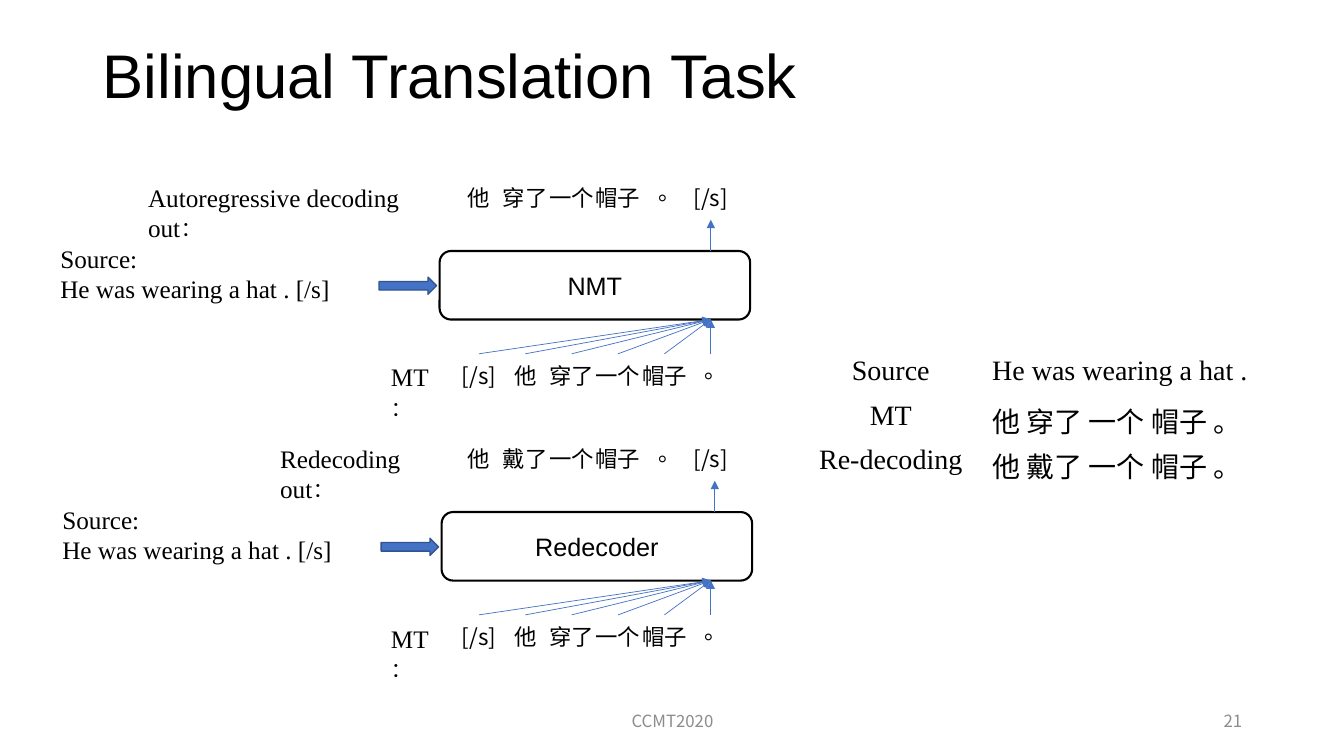
from lxml import etree
from pptx import Presentation
from pptx.dml.color import RGBColor
from pptx.enum.shapes import MSO_CONNECTOR, MSO_SHAPE
from pptx.enum.text import MSO_ANCHOR, PP_ALIGN
from pptx.oxml.ns import qn
from pptx.util import Inches, Pt

BLACK = RGBColor(0x00, 0x00, 0x00)
BLUE = RGBColor(0x44, 0x72, 0xC4)
DARK_BLUE = RGBColor(0x32, 0x54, 0x91)
GRAY = RGBColor(0x8C, 0x8C, 0x8C)
SERIF, SANS, CJK = "Times New Roman", "Arial", "Noto Sans CJK SC"

TITLE = "Bilingual Translation Task"
SOURCE = ["Source:", "He was wearing a hat . [/s]"]
MT_TOKENS = ["[/s]", "他", "穿了", "一个", "帽子", "。"]
PANELS = [
    dict(model="NMT", label="Autoregressive decoding out：", label_left=1.37,
         out=["他", "穿了", "一个", "帽子", "。", "[/s]"],
         dx=0, dy=0, up_x=7.05),
    dict(model="Redecoder", label="Redecoding out：", label_left=2.68,
         out=["他", "戴了", "一个", "帽子", "。", "[/s]"],
         dx=0.02, dy=2.59, up_x=7.09),
]
EXAMPLE = [
    ("Source", "He was wearing a hat .", SERIF),
    ("MT", "他 穿了 一个 帽子 。", CJK),
    ("Re-decoding", "他 戴了 一个 帽子 。", CJK),
]
FOOTERS = [("CCMT2020", 4.42, 4.5, PP_ALIGN.CENTER),
           ("21", 9.42, 3, PP_ALIGN.RIGHT)]

TOKEN_LEFT, TOKEN_W, TOKEN_H = 4.52, 0.46, 0.44
FAN_X = TOKEN_LEFT + 5.5 * TOKEN_W  # centre of the last token
LABEL_RIGHT = 4.52


def write(tf, text, size=18, font=SERIF, color=BLACK, align=PP_ALIGN.LEFT,
          anchor=MSO_ANCHOR.TOP):
    """Fill a text frame with one line of text or a list of lines."""
    tf.word_wrap = True
    tf.vertical_anchor = anchor
    lines = [text] if isinstance(text, str) else text
    for i, line in enumerate(lines):
        p = tf.paragraphs[0] if i == 0 else tf.add_paragraph()
        p.alignment = align
        r = p.add_run()
        r.text = line
        r.font.size, r.font.name, r.font.bold = Pt(size), font, False
        r.font.color.rgb = color
        etree.SubElement(r._r.get_or_add_rPr(), qn("a:ea"), typeface=font)


def add_text(slide, text, left, top, width, height, **fmt):
    box = slide.shapes.add_textbox(*map(Inches, (left, top, width, height)))
    write(box.text_frame, text, **fmt)
    return box


def add_tokens(slide, tokens, top):
    boxes = []
    for i, token in enumerate(tokens):
        box = add_text(slide, token, TOKEN_LEFT + i * TOKEN_W, top, TOKEN_W,
                       TOKEN_H, size=16, font=CJK, align=PP_ALIGN.CENTER,
                       anchor=MSO_ANCHOR.MIDDLE)
        tf = box.text_frame
        stop = token == "。"
        tf.margin_left = Inches(0.1 if stop else 0)
        tf.margin_bottom = Inches(0.12 if stop else 0)
        tf.margin_top = tf.margin_right = 0
        boxes.append(box)
    return boxes


def add_arrow(slide, x1, y1, x2, y2):
    line = slide.shapes.add_connector(MSO_CONNECTOR.STRAIGHT,
                                      *map(Inches, (x1, y1, x2, y2)))
    line.line.color.rgb = BLUE
    line.line.width = Pt(0.5)
    etree.SubElement(line.line._get_or_add_ln(), qn("a:tailEnd"),
                     type="triangle")
    etree.SubElement(line._element.spPr, qn("a:effectLst"))
    return line


def add_block(slide, kind, left, top, width, height, line_color, line_width):
    sp = slide.shapes.add_shape(kind, *map(Inches, (left, top, width, height)))
    sp.shadow.inherit = False
    sp.fill.background()
    sp.line.color.rgb = line_color
    sp.line.width = Pt(line_width)
    return sp


def add_panel(slide, model, label, label_left, out, dx, dy, up_x):
    """Draw one decoder with its source, input tokens and output tokens."""
    add_text(slide, SOURCE, 0.5 + dx, 2.36 + dy, 3.26, 0.71)
    arrow = add_block(slide, MSO_SHAPE.RIGHT_ARROW, 3.76 + dx, 2.75 + dy,
                      0.57, 0.17, DARK_BLUE, 1)
    arrow.fill.solid()
    arrow.fill.fore_color.rgb = BLUE
    box = add_block(slide, MSO_SHAPE.ROUNDED_RECTANGLE, 4.36 + dx, 2.49 + dy,
                    3.08, 0.68, BLACK, 1.5)
    write(box.text_frame, model, font=SANS, align=PP_ALIGN.CENTER,
          anchor=MSO_ANCHOR.MIDDLE)

    out_boxes = add_tokens(slide, out, 1.74 + dy)
    up = add_arrow(slide, up_x, 2.49 + dy, up_x, 2.18 + dy)
    if up_x == round(FAN_X, 2):
        up.end_connect(out_boxes[-1], 2)
    for i, token in enumerate(add_tokens(slide, MT_TOKENS, 3.51 + dy)):
        x = TOKEN_LEFT + (i + 0.5) * TOKEN_W
        line = add_arrow(slide, x, 3.51 + dy, FAN_X, 3.17 + dy)
        line.begin_connect(token, 0)

    add_text(slide, label, label_left, 1.76 + dy, LABEL_RIGHT - label_left, 0.4)
    add_text(slide, "MT：", 3.78, 3.54 + dy, 0.74, 0.4)


def add_example(slide):
    table = slide.shapes.add_table(
        len(EXAMPLE), 2, *map(Inches, (7.93, 3.49, 4.97, 1.32))).table
    table.first_row = table.horz_banding = False
    table.columns[0].width, table.columns[1].width = Inches(1.81), Inches(3.16)
    for i, (name, sentence, font) in enumerate(EXAMPLE):
        table.rows[i].height = Inches(0.44)
        write_cell(table.cell(i, 0), name, SERIF, PP_ALIGN.CENTER)
        write_cell(table.cell(i, 1), sentence, font, PP_ALIGN.LEFT)


def write_cell(cell, text, font, align):
    cell.fill.background()
    cell.margin_top, cell.margin_bottom = Inches(0.04), 0
    write(cell.text_frame, text, size=20, font=font, align=align)


def main():
    prs = Presentation()
    prs.slide_width, prs.slide_height = Inches(13.33), Inches(7.5)
    slide = prs.slides.add_slide(prs.slide_layouts[5])

    title = slide.shapes.title
    title.left, title.top = Inches(0.92), Inches(0.4)
    title.width, title.height = Inches(7.55), Inches(0.96)
    write(title.text_frame, TITLE, size=44, font=SANS)
    title.text_frame.paragraphs[0].line_spacing = 0.9

    for panel in PANELS:
        add_panel(slide, **panel)
    add_example(slide)
    for text, left, width, align in FOOTERS:
        add_text(slide, text, left, 6.95, width, 0.4, size=12, font=CJK,
                 color=GRAY, align=align, anchor=MSO_ANCHOR.MIDDLE)
    prs.save("out.pptx")


if __name__ == "__main__":
    main()
